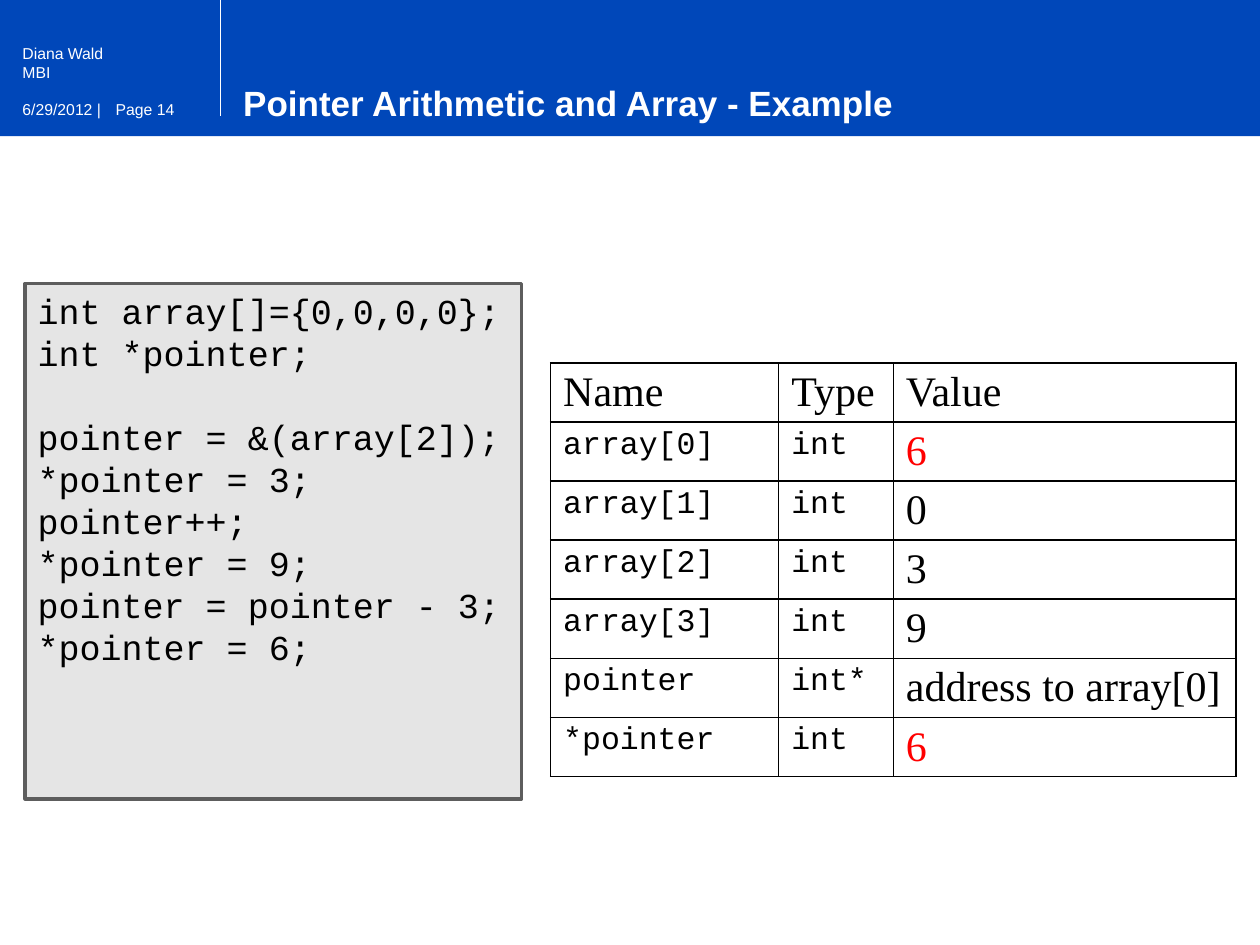
from dataclasses import dataclass

from lxml import etree
from pptx import Presentation
from pptx.dml.color import RGBColor
from pptx.enum.shapes import MSO_CONNECTOR, MSO_SHAPE
from pptx.enum.text import MSO_ANCHOR, PP_ALIGN
from pptx.oxml.ns import qn
from pptx.util import Inches, Pt

RECT = MSO_SHAPE.RECTANGLE
STRAIGHT = MSO_CONNECTOR.STRAIGHT
LEFT = PP_ALIGN.LEFT
TOP, MIDDLE = MSO_ANCHOR.TOP, MSO_ANCHOR.MIDDLE
TITLE_ONLY = 5


@dataclass(frozen=True)
class Theme:
    page: str = "CCDBF1"
    blue: str = "0047B9"
    white: str = "FFFFFF"
    black: str = "000000"
    red: str = "FF0000"
    code_fill: str = "E5E5E5"
    code_line: str = "5D5D5D"
    sans: str = "Arial"
    mono: str = "Courier New"
    serif: str = "Times New Roman"
    label_size: int = 9
    title_size: int = 20
    code_size: int = 20
    name_size: int = 18
    value_size: int = 24


THEME = Theme()

HEADER_LABELS = [
    ("Page 14", 0.82, 0.74, 1.01),
    ("6/29/2012 |", 0.08, 0.74, 0.92),
    ("Diana Wald", 0.08, 0.3, 1.87),
    ("MBI", 0.08, 0.45, 1.33),
]
DECLARATIONS = ["int array[]={0,0,0,0};", "int *pointer;"]
STATEMENTS = [
    "pointer = &(array[2]);",
    "*pointer = 3;",
    "pointer++;",
    "*pointer = 9;",
    "pointer = pointer - 3;",
    "*pointer = 6;",
]
VARIABLES = [
    ("Name", "Type", "Value"),
    ("array[0]", "int", "6"),
    ("array[1]", "int", "0"),
    ("array[2]", "int", "3"),
    ("array[3]", "int", "9"),
    ("pointer", "int*", "address to array[0]"),
    ("*pointer", "int", "6"),
]
COLUMN_WIDTHS = [1.81, 0.91, 2.72]
ROW_HEIGHT = 0.42
CHANGED_VALUE = "6"


def rgb(color):
    return RGBColor.from_string(color)


def format_text(tf, font, size, color, bold=False):
    for p in tf.paragraphs:
        p.alignment = LEFT
        for r in p.runs:
            r.font.name = font
            r.font.size = Pt(size)
            r.font.bold = bold
            r.font.color.rgb = rgb(color)


def add_rect(slide, left, top, width, height, fill, line=None):
    sp = slide.shapes.add_shape(
        RECT, Inches(left), Inches(top), Inches(width), Inches(height))
    sp.shadow.inherit = False
    sp.fill.solid()
    sp.fill.fore_color.rgb = rgb(fill)
    if line:
        sp.line.color.rgb = rgb(line)
        sp.line.width = Pt(2)
    else:
        sp.line.fill.background()
    return sp


def add_divider(slide, x, top, bottom):
    line = slide.shapes.add_connector(
        STRAIGHT, Inches(x), Inches(bottom), Inches(x), Inches(top))
    line.line.color.rgb = rgb(THEME.white)
    line.line.width = Pt(0.9)
    etree.SubElement(line.element.spPr, qn("a:effectLst"))


def add_label(slide, text, left, top, width):
    sp = slide.shapes.add_textbox(
        Inches(left), Inches(top), Inches(width), Inches(0.25))
    tf = sp.text_frame
    tf.word_wrap = True
    tf.text = text
    format_text(tf, THEME.sans, THEME.label_size, THEME.white)


def set_title(slide, text):
    title = slide.shapes.title
    title.left, title.top = Inches(1.83), Inches(0.6)
    title.width, title.height = Inches(6.17), Inches(0.43)
    tf = title.text_frame
    tf.text = text
    tf.vertical_anchor = MIDDLE
    format_text(tf, THEME.sans, THEME.title_size, THEME.white, bold=True)
    # Bring the title in front of the header band
    title.element.getparent().append(title.element)


def add_code(slide):
    sp = add_rect(slide, 0.2, 2.25, 3.94, 4.09, THEME.code_fill, THEME.code_line)
    tf = sp.text_frame
    tf.word_wrap = True
    tf.vertical_anchor = TOP
    tf.text = "\n".join(DECLARATIONS + STATEMENTS)
    format_text(tf, THEME.mono, THEME.code_size, THEME.black)
    for p in tf.paragraphs:
        p.line_spacing = Pt(24)
    # One line of space between declarations and statements
    tf.paragraphs[len(DECLARATIONS)].space_before = Pt(24)


def set_borders(cell):
    tc_pr = cell._tc.get_or_add_tcPr()
    for i, side in enumerate(("a:lnL", "a:lnR", "a:lnT", "a:lnB")):
        ln = etree.Element(qn(side), w=str(Pt(1)))
        fill = etree.SubElement(ln, qn("a:solidFill"))
        etree.SubElement(fill, qn("a:srgbClr"), val=THEME.black)
        tc_pr.insert(i, ln)


def add_variable_table(slide):
    table = slide.shapes.add_table(
        len(VARIABLES), len(COLUMN_WIDTHS), Inches(4.37), Inches(2.88),
        Inches(sum(COLUMN_WIDTHS)), Inches(ROW_HEIGHT * len(VARIABLES))).table
    table.first_row = table.horz_banding = False
    for column, width in zip(table.columns, COLUMN_WIDTHS):
        column.width = Inches(width)
    for row, texts in enumerate(VARIABLES):
        table.rows[row].height = Inches(ROW_HEIGHT)
        for col, text in enumerate(texts):
            cell = table.cell(row, col)
            cell.fill.background()
            set_borders(cell)
            cell.text_frame.text = text
            is_code = row > 0 and col < 2
            font = THEME.mono if is_code else THEME.serif
            size = THEME.name_size if is_code else THEME.value_size
            color = THEME.red if text == CHANGED_VALUE else THEME.black
            format_text(cell.text_frame, font, size, color)


def main():
    prs = Presentation()
    prs.slide_width, prs.slide_height = Inches(10), Inches(7.5)
    slide = prs.slides.add_slide(prs.slide_layouts[TITLE_ONLY])
    slide.background.fill.solid()
    slide.background.fill.fore_color.rgb = rgb(THEME.page)

    # Page body and header band
    add_rect(slide, 0, 1.08, 10, 6.42, THEME.white)
    add_rect(slide, 0, 0, 10, 1.08, THEME.blue)
    add_divider(slide, 1.75, 0, 0.92)
    for label in HEADER_LABELS:
        add_label(slide, *label)
    set_title(slide, "Pointer Arithmetic and Array - Example")

    # Code and the resulting variables
    add_code(slide)
    add_variable_table(slide)
    prs.save("out.pptx")


if __name__ == "__main__":
    main()
